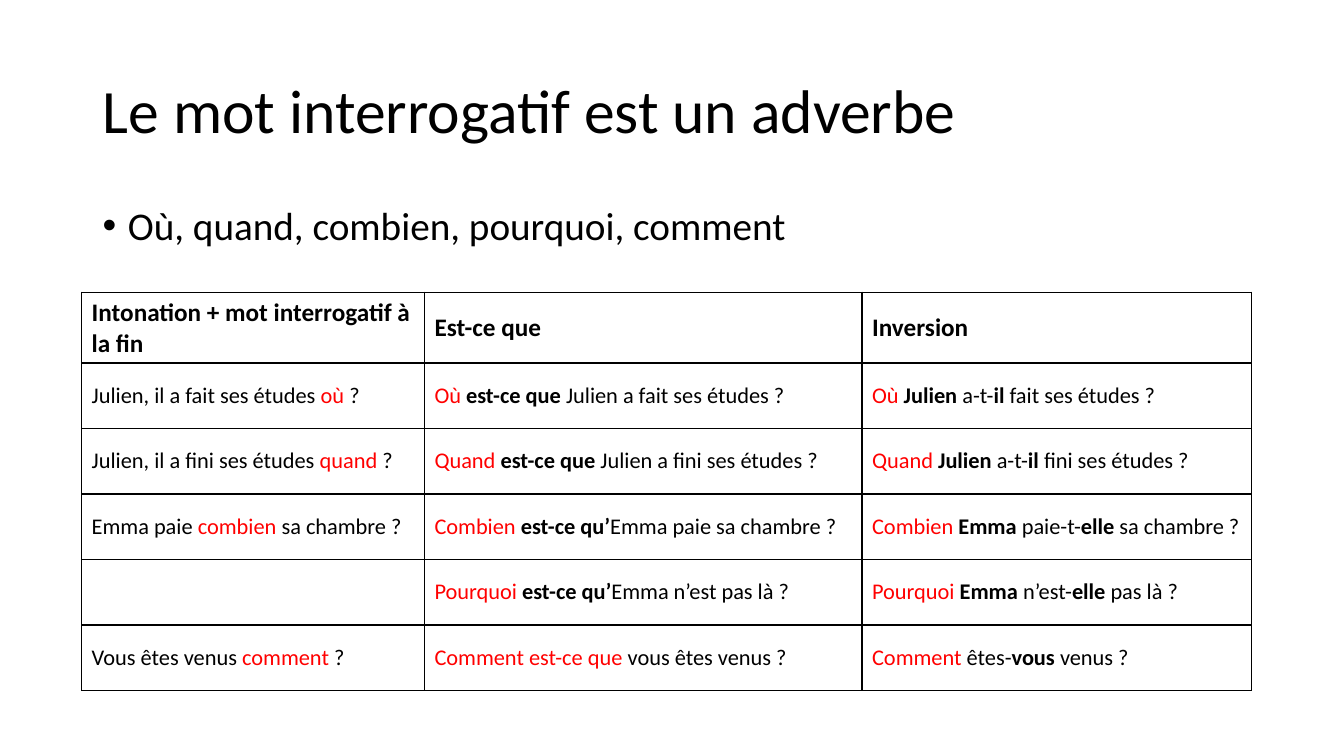
from lxml.etree import SubElement as Sub
from pptx import Presentation
from pptx.dml.color import RGBColor
from pptx.enum.text import MSO_ANCHOR as Anchor
from pptx.oxml.ns import qn
from pptx.util import Inches, Pt

BLACK, RED, WHITE = "000000", "FF0000", "FFFFFF"
COLS = [3.4, 4.34, 3.86]
ROWS = [0.63] + [0.65] * 5
CELLS = [
    ["*Intonation + mot interrogatif à la fin*", "*Est-ce que*", "*Inversion*"],
    ["Julien, il a fait ses études ~où~ ?",
     "~Où ~*est-ce que *Julien a fait ses études ?",
     "~Où ~*Julien* a-t-*il* fait ses études ?"],
    ["Julien, il a fini ses études ~quand~ ?",
     "~Quand ~*est-ce que *Julien a fini ses études ?",
     "~Quand ~*Julien* a-t-*il* fini ses études ?"],
    ["Emma paie ~combien~ sa chambre ?",
     "~Combien ~*est-ce qu’*Emma paie sa chambre ?",
     "~Combien ~*Emma* paie-t-*elle* sa chambre ?"],
    ["",
     "~Pourquoi ~*est-ce qu’*Emma n’est pas là ?",
     "~Pourquoi ~*Emma* n’est-*elle* pas là ?"],
    ["Vous êtes venus ~comment~ ?",
     "~Comment est-ce que ~vous êtes venus ?",
     "~Comment~ êtes-*vous* venus ?"],
]


def tint(code):
    """Turn a hex string into a colour."""
    return RGBColor.from_string(code)


def write(frame, text, size, space=None, before=None, anchor=Anchor.TOP):
    """Write text where *stars* mean bold and ~tildes~ mean red."""
    frame.word_wrap = True
    frame.vertical_anchor = anchor
    para = frame.paragraphs[0]
    para.font.size = Pt(size)
    para.line_spacing = space
    para.space_before = before
    for i, part in enumerate(text.split("*")):
        for j, piece in enumerate(part.split("~")):
            if piece:
                run = para.add_run()
                run.text = piece
                font = run.font
                font.name, font.size, font.bold = "Calibri", Pt(size), i % 2 == 1
                font.color.rgb = tint(RED if j % 2 else BLACK)
    return para


def head(slide, x, y, w, h):
    """Place the title in its box."""
    box = slide.shapes.add_textbox(Inches(x), Inches(y), Inches(w), Inches(h))
    write(box.text_frame, "Le mot interrogatif est un adverbe", 44,
          space=0.9, anchor=Anchor.MIDDLE)


def body(slide, x, y, w, h):
    """Place the bulleted list of adverbs in its box."""
    box = slide.shapes.add_textbox(Inches(x), Inches(y), Inches(w), Inches(h))
    para = write(box.text_frame, "Où, quand, combien, pourquoi, comment", 28,
                 space=0.9, before=Pt(10))
    props = para._p.get_or_add_pPr()
    props.set("marL", str(Inches(0.25)))
    props.set("indent", str(Inches(-0.25)))
    Sub(props, qn("a:buFont"), typeface="Arial")
    Sub(props, qn("a:buChar"), char="•")


def frame_cell(cell):
    """Give a cell thin black borders and a white fill."""
    props = cell._tc.get_or_add_tcPr()
    for side in ("lnL", "lnR", "lnT", "lnB"):
        line = Sub(props, qn("a:" + side), w=str(Pt(1)))
        Sub(Sub(line, qn("a:solidFill")), qn("a:srgbClr"), val=BLACK)
    cell.fill.solid()
    cell.fill.fore_color.rgb = tint(WHITE)


def grid(slide, x, y):
    """Place the table of question forms from its top left corner."""
    table = slide.shapes.add_table(
        len(ROWS), len(COLS), Inches(x), Inches(y),
        Inches(sum(COLS)), Inches(sum(ROWS))).table
    for col, wide in zip(table.columns, COLS):
        col.width = Inches(wide)
    for r, (row, high) in enumerate(zip(table.rows, ROWS)):
        row.height = Inches(high)
        for cell, text in zip(row.cells, CELLS[r]):
            frame_cell(cell)
            write(cell.text_frame, text, 16 if r else 18)
            cell.vertical_anchor = Anchor.MIDDLE


def main():
    """Build the slide and save it."""
    deck = Presentation()
    deck.slide_width, deck.slide_height = Inches(13.33), Inches(7.5)
    slide = deck.slides.add_slide(deck.slide_layouts[6])
    head(slide, 0.92, 0.4, 11.5, 1.45)
    body(slide, 0.92, 2, 11.5, 4.76)
    grid(slide, 0.81, 2.9)
    deck.save("out.pptx")


if __name__ == "__main__":
    main()
